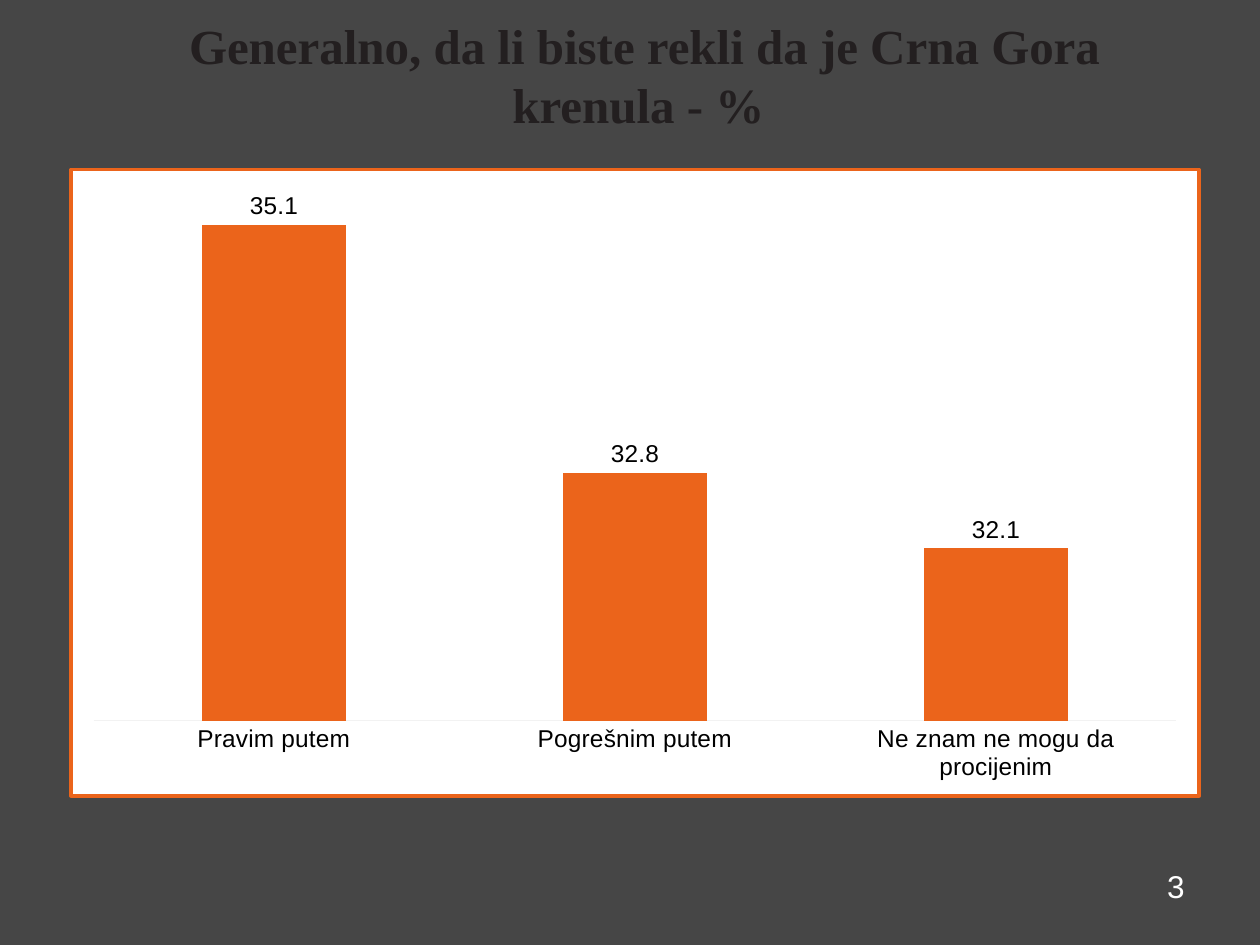
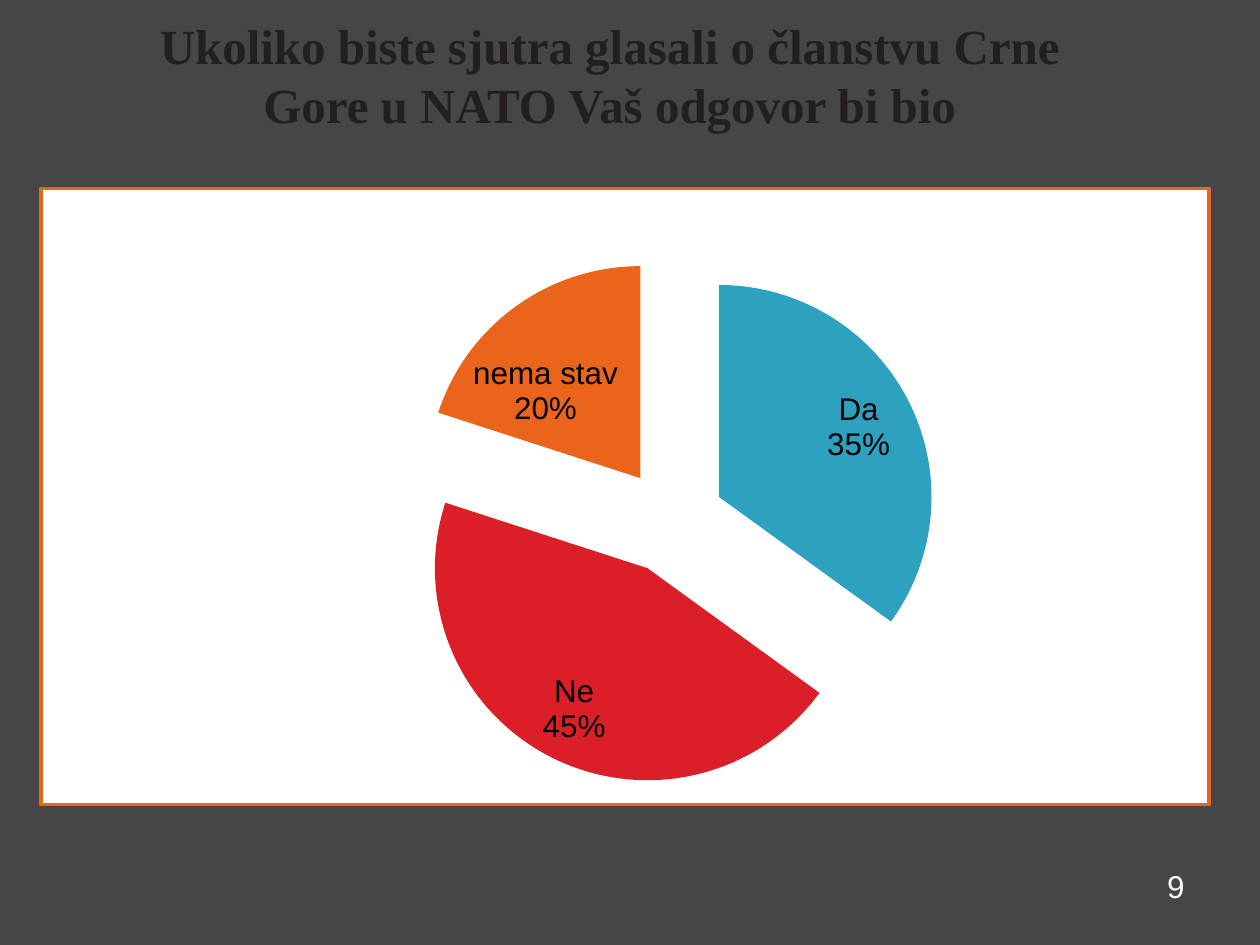
from copy import deepcopy
from lxml.etree import SubElement
from pptx import Presentation
from pptx.chart.data import CategoryChartData
from pptx.dml.color import RGBColor
from pptx.enum.chart import XL_CHART_TYPE, XL_LABEL_POSITION, XL_TICK_MARK
from pptx.enum.text import PP_ALIGN
from pptx.oxml import parse_xml
from pptx.oxml.ns import nsdecls, qn
from pptx.util import Pt

BACKGROUND = RGBColor(0x46, 0x46, 0x46)
INK = RGBColor(0x23, 0x1F, 0x20)
WHITE = RGBColor(0xFF, 0xFF, 0xFF)
BLACK = RGBColor(0, 0, 0)
ORANGE = RGBColor(0xEB, 0x64, 0x1B)
TEAL = RGBColor(0x2D, 0xA2, 0xBF)
RED = RGBColor(0xDA, 0x1F, 0x28)
PALE = RGBColor(0xF2, 0xF2, 0xF2)

TITLE = {"name": "Times New Roman", "size": Pt(28), "bold": True}
NUMBER = {"name": "Arial", "size": Pt(18)}
CHART = {"name": "Arial", "size": Pt(10)}


def set_attrs(obj, values):
    for name, value in values.items():
        setattr(obj, name, value)


def add_manual_layout(parent, settings):
    manual = SubElement(parent, qn("c:manualLayout"))
    for name, value in settings.items():
        SubElement(manual, qn("c:" + name)).set("val", str(value))


class Deck:
    def __init__(self):
        self.prs = Presentation()
        set_attrs(self.prs, {"slide_width": Pt(720), "slide_height": Pt(540)})

    def slide(self, number, title, left, width):
        self.s = self.prs.slides.add_slide(self.prs.slide_layouts[6])
        self.paint(self.s.background.fill, BACKGROUND)
        self.text(str(number), (516.2, 491.8, 167.8, 37.4), NUMBER, WHITE, PP_ALIGN.RIGHT)
        self.text(title, (left, 5.2, width, 74.9), TITLE, INK, PP_ALIGN.CENTER)

    def paint(self, fill, color):
        fill.solid()
        fill.fore_color.rgb = color

    def text(self, text, box, font, color, align):
        tf = self.s.shapes.add_textbox(*map(Pt, box)).text_frame
        tf.word_wrap = True
        p = tf.paragraphs[0]
        p.alignment = align
        r = p.add_run()
        r.text = text
        set_attrs(r.font, font)
        r.font.color.rgb = color

    def chart(self, kind, box, values, layout, label_size, label_format):
        data = CategoryChartData(number_format=label_format["number_format"])
        data.categories = values.keys()
        data.add_series("Series 1", values.values())
        chart = self.s.shapes.add_chart(kind, *map(Pt, box), data).chart
        set_attrs(chart, {"has_legend": False, "has_title": False})
        set_attrs(chart.font, CHART)
        chart.font.color.rgb = BLACK
        self.frame(chart)
        self.place_plot(chart, layout)
        plot = chart.plots[0]
        labels = plot.series[0].data_labels
        set_attrs(labels, {"number_format_is_linked": False, **label_format})
        labels.font.size = Pt(label_size)
        labels.font.color.rgb = BLACK
        return chart, plot

    def frame(self, chart):
        chart_xml = chart.element.find(qn("c:chart"))
        chart_xml.addnext(parse_xml(
            f'<c:spPr {nsdecls("c", "a")}>'
            f'<a:solidFill><a:srgbClr val="{WHITE}"/></a:solidFill>'
            f'<a:ln w="{Pt(2)}"><a:solidFill><a:srgbClr val="{ORANGE}"/></a:solidFill>'
            '<a:round/></a:ln></c:spPr>'))

    def place_plot(self, chart, layout):
        area = chart.element.find(".//" + qn("c:plotArea"))
        for old in area.findall(qn("c:layout")):
            area.remove(old)
        outer = parse_xml(f'<c:layout {nsdecls("c")}/>')
        area.insert(0, outer)
        add_manual_layout(outer, {"layoutTarget": "inner", "xMode": "edge", "yMode": "edge",
                                  **dict(zip("xywh", layout))})

    def columns(self, box, values, layout, low, high):
        chart, plot = self.chart(
            XL_CHART_TYPE.COLUMN_CLUSTERED, box, values, layout, 14,
            {"number_format": "###0.0", "show_value": True,
             "position": XL_LABEL_POSITION.OUTSIDE_END})
        set_attrs(plot, {"gap_width": 150, "overlap": -25, "vary_by_categories": False})
        self.paint(plot.series[0].format.fill, ORANGE)
        set_attrs(chart.value_axis, {
            "minimum_scale": low, "maximum_scale": high, "visible": False,
            "has_major_gridlines": False})
        axis = chart.category_axis
        axis.major_tick_mark = XL_TICK_MARK.NONE
        axis.tick_labels.font.size = Pt(14)
        axis.format.line.color.rgb = PALE

    def pie(self, box, values, layout, colors, explosion, label_shifts):
        chart, plot = self.chart(
            XL_CHART_TYPE.PIE, box, values, layout, 18,
            {"number_format": "0%", "show_value": False, "show_percentage": True,
             "show_category_name": True, "position": XL_LABEL_POSITION.INSIDE_END})
        plot.vary_by_categories = True
        for i, color in enumerate(colors):
            self.paint(plot.series[0].points[i].format.fill, color)
        first = chart.element.find(".//" + qn("c:dPt"))
        first.addprevious(parse_xml(f'<c:explosion {nsdecls("c")} val="{explosion}"/>'))
        self.shift_labels(chart.element.find(".//" + qn("c:dLbls")), label_shifts)

    def shift_labels(self, labels, shifts):
        separator = parse_xml(f'<c:separator {nsdecls("c")}/>')
        separator.text = "\n"
        for leader in labels.findall(qn("c:showLeaderLines")):
            labels.remove(leader)
        labels.append(separator)
        shared = list(labels)
        for i, shift in enumerate(shifts):
            label = parse_xml(f'<c:dLbl {nsdecls("c")}><c:idx val="{i}"/><c:layout/></c:dLbl>')
            add_manual_layout(label.find(qn("c:layout")), dict(zip("xy", shift)))
            label.extend(deepcopy(shared))
            labels.insert(i, label)


def main():
    deck = Deck()
    deck.slide(3, "Generalno, da li biste rekli da je Crna Gora krenula - % ", 78.5, 579.6)
    deck.columns(
        (39.6, 95.8, 646.6, 360),
        {"Pravim putem": 35.1, "Pogrešnim putem": 32.8, "Ne znam ne mogu da procijenim": 32.1},
        (0.02, 0.02, 0.96, 0.86), 30.5, 35.5)
    deck.slide(9, "Ukoliko biste sjutra glasali o članstvu Crne Gore u NATO Vaš odgovor bi bio",
               82, 532.8)
    deck.pie((22.3, 106.6, 669.6, 354.2), {"Da": 35, "Ne": 45, "nema stav": 20},
             (0.31, 0.11, 0.46, 0.86), (TEAL, RED, ORANGE), 25,
             ((-0.01, -0.02), (-0.01, -0.01), (-0.04, 0.07)))
    deck.prs.save("out.pptx")


if __name__ == "__main__":
    main()
